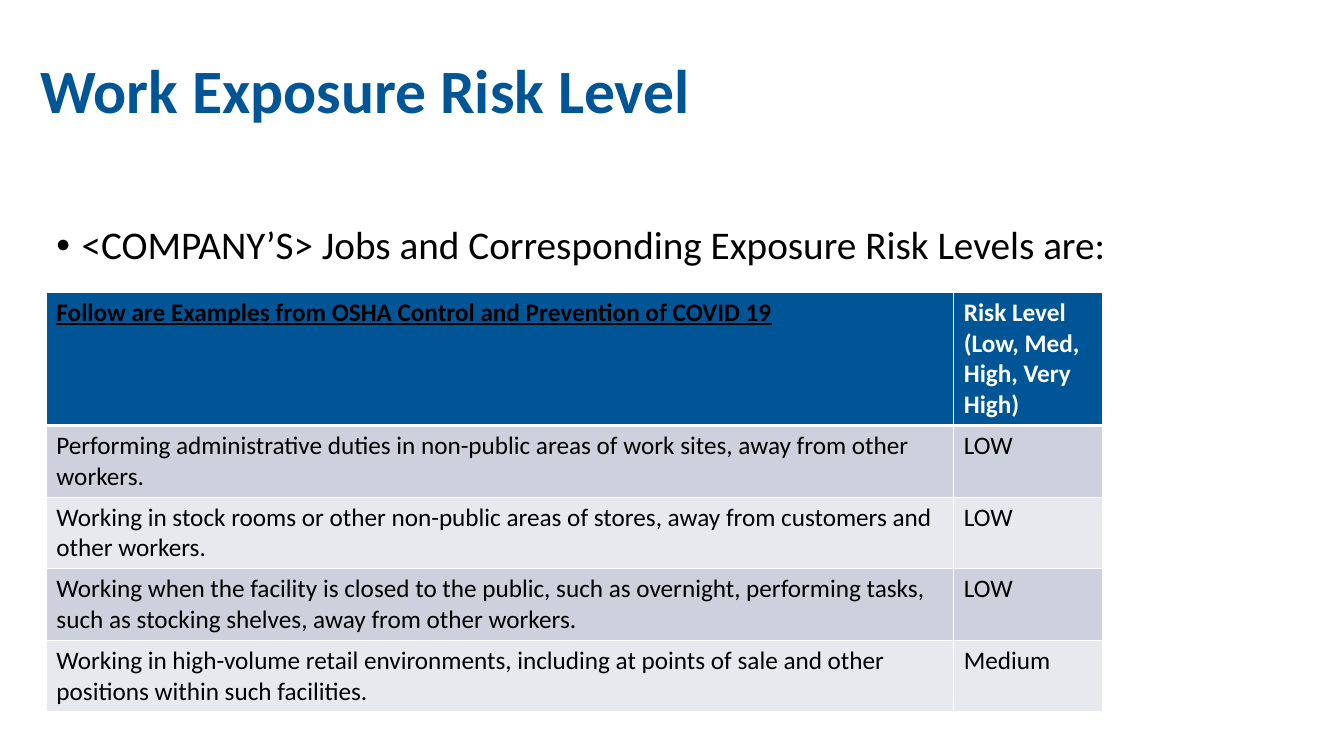
from lxml import etree
from pptx import Presentation
from pptx import util as u
from pptx.dml.color import RGBColor
from pptx.enum import text
from pptx.oxml.ns import qn

COLOURS = {
    "blue": "005596",
    "black": "000000",
    "white": "FFFFFF",
    "dark_band": "CCD1DD",
    "light_band": "E7E9EF",
}
FONT = "Calibri"
HEADER = (
    "Follow are Examples from OSHA Control and Prevention of COVID 19",
    "Risk Level (Low, Med, High, Very High)",
)
JOBS = [
    ("Performing administrative duties in non-public areas of work sites, "
     "away from other workers.", "LOW"),
    ("Working in stock rooms or other non-public areas of stores, "
     "away from customers and other workers.", "LOW"),
    ("Working when the facility is closed to the public, such as overnight, "
     "performing tasks, such as stocking shelves, away from other workers.", "LOW"),
    ("Working in high-volume retail environments, including at points of sale "
     "and other positions within such facilities.", "Medium"),
]


def colour(name):
    return RGBColor.from_string(COLOURS[name])


def format_runs(paragraph, size, colour_name, bold=False, underline=False):
    for run in paragraph.runs:
        run.font.name = FONT
        run.font.size = u.Pt(size)
        run.font.bold = bold
        run.font.underline = underline
        run.font.color.rgb = colour(colour_name)


def place(shape, box):
    shape.left, shape.top, shape.width, shape.height = map(u.Inches, box)


def fill_title(shape, box):
    place(shape, box)
    frame = shape.text_frame
    frame.text = "Work Exposure Risk Level"
    frame.word_wrap = True
    frame.auto_size = text.MSO_AUTO_SIZE.NONE
    frame.vertical_anchor = text.MSO_ANCHOR.MIDDLE
    frame.margin_left = frame.margin_right = u.Inches(0.4)
    frame.margin_top = frame.margin_bottom = u.Inches(0.4)
    paragraph = frame.paragraphs[0]
    paragraph.alignment = text.PP_ALIGN.LEFT
    paragraph.line_spacing = 0.9
    format_runs(paragraph, 44, "blue", bold=True)


def fill_body(shape, box):
    place(shape, box)
    frame = shape.text_frame
    frame.text = "<COMPANY’S> Jobs and Corresponding Exposure Risk Levels are:"
    frame.word_wrap = True
    frame.auto_size = text.MSO_AUTO_SIZE.NONE
    frame.vertical_anchor = text.MSO_ANCHOR.TOP
    paragraph = frame.paragraphs[0]
    # Hanging bullet
    properties = paragraph._p.get_or_add_pPr()
    properties.set("marL", str(u.Inches(0.25)))
    properties.set("indent", str(-u.Inches(0.25)))
    etree.SubElement(properties, qn("a:buFont"), typeface="Arial")
    etree.SubElement(properties, qn("a:buChar"), char="•")
    paragraph.line_spacing = 0.9
    paragraph.space_before = u.Pt(0)
    format_runs(paragraph, 28, "black")


def add_borders(cell, widths):
    properties = cell._tc.get_or_add_tcPr()
    for side, width in widths.items():
        line = etree.SubElement(properties, qn(f"a:ln{side}"), w=str(u.Pt(width)))
        fill = etree.SubElement(line, qn("a:solidFill"))
        etree.SubElement(fill, qn("a:srgbClr"), val=COLOURS["white"])


def add_risk_table(slide, box, risk_width=1.48, header_height=1.32):
    rows = [HEADER, *JOBS]
    left, top, width, height = box
    table = slide.shapes.add_table(len(rows), 2, *map(u.Inches, box)).table
    table.columns[0].width = u.Inches(width - risk_width)
    table.columns[1].width = u.Inches(risk_width)
    job_height = (height - header_height) / len(JOBS)
    for row_index, row in enumerate(rows):
        is_header = row_index == 0
        table.rows[row_index].height = u.Inches(header_height if is_header else job_height)
        band = "blue" if is_header else ("light_band", "dark_band")[row_index % 2]
        for column_index, words in enumerate(row):
            cell = table.cell(row_index, column_index)
            add_borders(cell, {"L": 1, "R": 1, "T": 3 if row_index == 1 else 1,
                               "B": 3 if is_header else 1})
            cell.fill.solid()
            cell.fill.fore_color.rgb = colour(band)
            cell.text_frame.text = words
            is_risk_header = is_header and column_index == 1
            format_runs(cell.text_frame.paragraphs[0], 18,
                        "white" if is_risk_header else "black",
                        bold=is_header, underline=is_header and column_index == 0)


def build_risk_slide(presentation):
    slide = presentation.slides.add_slide(presentation.slide_layouts[1])
    slide.background.fill.solid()
    slide.background.fill.fore_color.rgb = colour("white")
    fill_title(slide.shapes.title, (0, 0, 12.42, 1.85))
    fill_body(slide.placeholders[1], (0.46, 2.19, 12.51, 0.6))
    add_risk_table(slide, (0.46, 2.9, 10.48, 4.16))


def main():
    presentation = Presentation()
    presentation.slide_width = u.Inches(13.33)
    presentation.slide_height = u.Inches(7.5)
    build_risk_slide(presentation)
    presentation.save("out.pptx")


if __name__ == "__main__":
    main()
